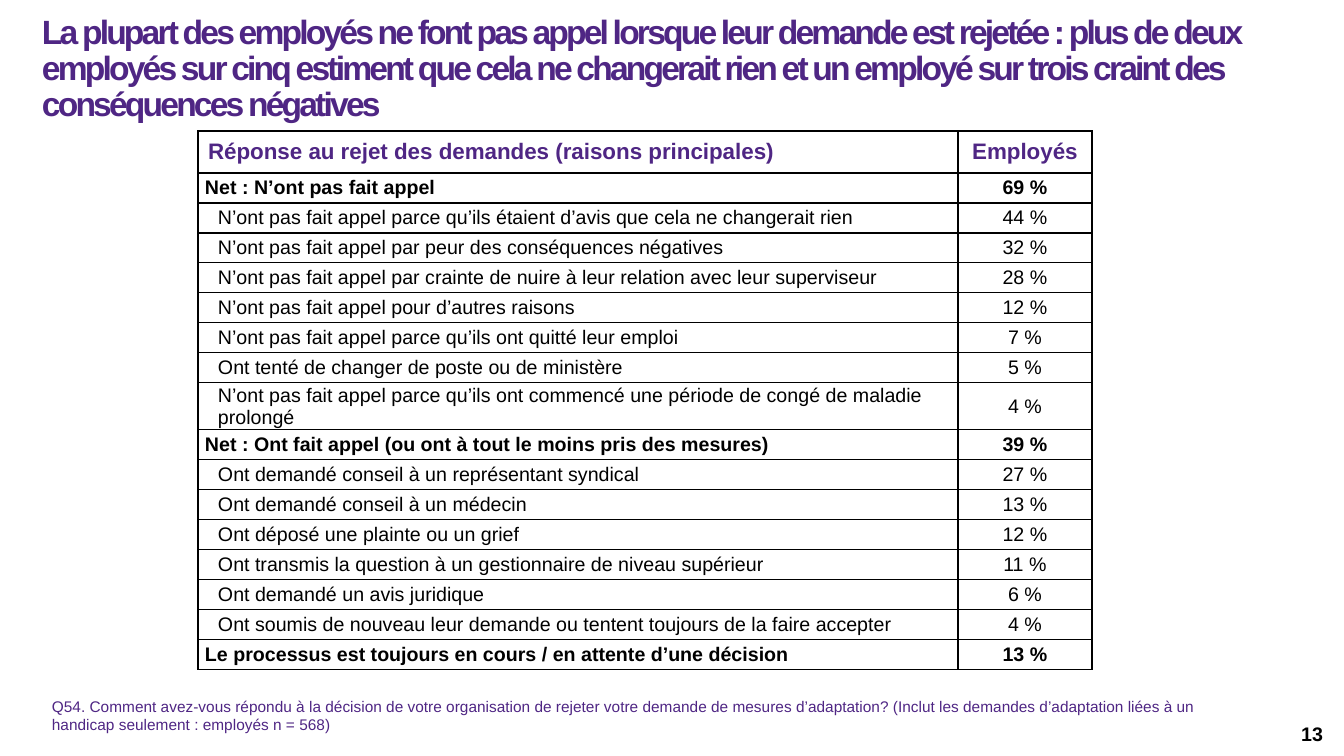
from dataclasses import dataclass

from lxml import etree
from pptx import Presentation
from pptx import util as u
from pptx.dml.color import RGBColor
from pptx.enum import text
from pptx.oxml import ns

PX = u.Inches(7.5) / 756  # EMU in one px


@dataclass(frozen=True)
class Theme:
    font: str = "Arial"
    purple: str = "4F2684"
    black: str = "000000"
    title: int = 24
    header: int = 16
    body: int = 14
    note: int = 11


THEME = Theme()

TITLE = ("La plupart des employés ne font pas appel lorsque leur demande est rejetée : "
         "plus de deux employés sur cinq estiment que cela ne changerait rien et un "
         "employé sur trois craint des conséquences négatives")
QUESTION = ("Q54. Comment avez-vous répondu à la décision de votre organisation de rejeter "
            "votre demande de mesures d’adaptation? (Inclut les demandes d’adaptation liées "
            "à un handicap seulement : employés n = 568)")
HEADINGS = ("Réponse au rejet des demandes (raisons principales)", "Employés")

# Answer, share in percent, whether it is a main row
ANSWERS = [
    ("Net : N’ont pas fait appel", 69, True),
    ("N’ont pas fait appel parce qu’ils étaient d’avis que cela ne changerait rien", 44, False),
    ("N’ont pas fait appel par peur des conséquences négatives", 32, False),
    ("N’ont pas fait appel par crainte de nuire à leur relation avec leur superviseur", 28, False),
    ("N’ont pas fait appel pour d’autres raisons", 12, False),
    ("N’ont pas fait appel parce qu’ils ont quitté leur emploi", 7, False),
    ("Ont tenté de changer de poste ou de ministère", 5, False),
    ("N’ont pas fait appel parce qu’ils ont commencé une période de congé de maladie prolongé",
     4, False),
    ("Net : Ont fait appel (ou ont à tout le moins pris des mesures)", 39, True),
    ("Ont demandé conseil à un représentant syndical", 27, False),
    ("Ont demandé conseil à un médecin", 13, False),
    ("Ont déposé une plainte ou un grief", 12, False),
    ("Ont transmis la question à un gestionnaire de niveau supérieur", 11, False),
    ("Ont demandé un avis juridique", 6, False),
    ("Ont soumis de nouveau leur demande ou tentent toujours de la faire accepter", 4, False),
    ("Le processus est toujours en cours / en attente d’une décision", 13, True),
]


def px(length):
    return u.Emu(round(length * PX))


def set_all(target, formats):
    for name, value in formats.items():
        setattr(target, name, value)


def write(paragraph, words, size, color, bold=False, **formats):
    set_all(paragraph, formats)
    run = paragraph.add_run()
    run.text = words
    set_all(run.font, {"name": THEME.font, "size": u.Pt(size), "bold": bold})
    run.font.color.rgb = RGBColor.from_string(color)
    return run


def add_text(slide, box, words, size, color, bold=False, frame=None, **formats):
    text_frame = slide.shapes.add_textbox(*map(px, box)).text_frame
    set_all(text_frame, {"word_wrap": True, **(frame or {})})
    return write(text_frame.paragraphs[0], words, size, color, bold, **formats)


def add_borders(cell):
    properties = cell._tc.get_or_add_tcPr()
    for side in ("lnL", "lnR", "lnT", "lnB"):
        line = etree.SubElement(properties, ns.qn(f"a:{side}"), w=str(u.Pt(1)))
        fill = etree.SubElement(line, ns.qn("a:solidFill"))
        etree.SubElement(fill, ns.qn("a:srgbClr"), val=THEME.black)


def fill_cell(cell, words, size, color, bold, margins=None, **formats):
    add_borders(cell)
    cell.fill.background()
    set_all(cell, {"vertical_anchor": text.MSO_ANCHOR.MIDDLE, **(margins or {})})
    write(cell.text_frame.paragraphs[0], words, size, color, bold, **formats)


def add_answers(slide):
    label_width, share_width, header_height, row_height = 760, 134, 42, 30
    height = header_height + row_height * len(ANSWERS)
    table = slide.shapes.add_table(
        len(ANSWERS) + 1, 2, px(198), px(131),
        px(label_width + share_width), px(height)).table
    set_all(table, {"first_row": False, "horz_banding": False})
    for column, width in zip(table.columns, (label_width, share_width)):
        column.width = px(width)
    for index, row in enumerate(table.rows):
        row.height = px(row_height if index else header_height)

    # Headings
    alignments = (text.PP_ALIGN.LEFT, text.PP_ALIGN.CENTER)
    for column, (heading, alignment) in enumerate(zip(HEADINGS, alignments)):
        fill_cell(table.cell(0, column), heading, THEME.header, THEME.purple, True,
                  alignment=alignment)

    # Answers, with the detail rows indented
    margins = {"margin_left": px(7), "margin_right": px(7),
               "margin_top": 0, "margin_bottom": 0}
    for row, (answer, share, main_row) in enumerate(ANSWERS, 1):
        label, value = table.cell(row, 0), table.cell(row, 1)
        for cell, words, alignment in zip((label, value), (answer, f"{share} %"), alignments):
            fill_cell(cell, words, THEME.body, THEME.black, main_row, margins,
                      alignment=alignment, space_after=u.Pt(5.1))
        if not main_row:
            label.text_frame.paragraphs[0]._p.get_or_add_pPr().set("marL", str(px(13)))


def main():
    deck = Presentation()
    set_all(deck, {"slide_width": px(1344), "slide_height": px(756)})
    slide = deck.slides.add_slide(deck.slide_layouts[6])

    # Title, with tight letter spacing
    title = add_text(slide, (42, 13, 1217, 114), TITLE, THEME.title, THEME.purple, True,
                     {"margin_left": 0, "margin_right": 0,
                      "margin_top": px(2), "margin_bottom": px(2)}, line_spacing=0.9)
    title._r.get_or_add_rPr().set("spc", "-200")

    add_answers(slide)

    # Survey question and page number
    add_text(slide, (42, 692, 1206, 47), QUESTION, THEME.note, THEME.purple)
    add_text(slide, (1031, 714, 302, 40), "13", THEME.body, THEME.black, True,
             {"vertical_anchor": text.MSO_ANCHOR.MIDDLE}, alignment=text.PP_ALIGN.RIGHT)

    deck.save("out.pptx")


if __name__ == "__main__":
    main()
